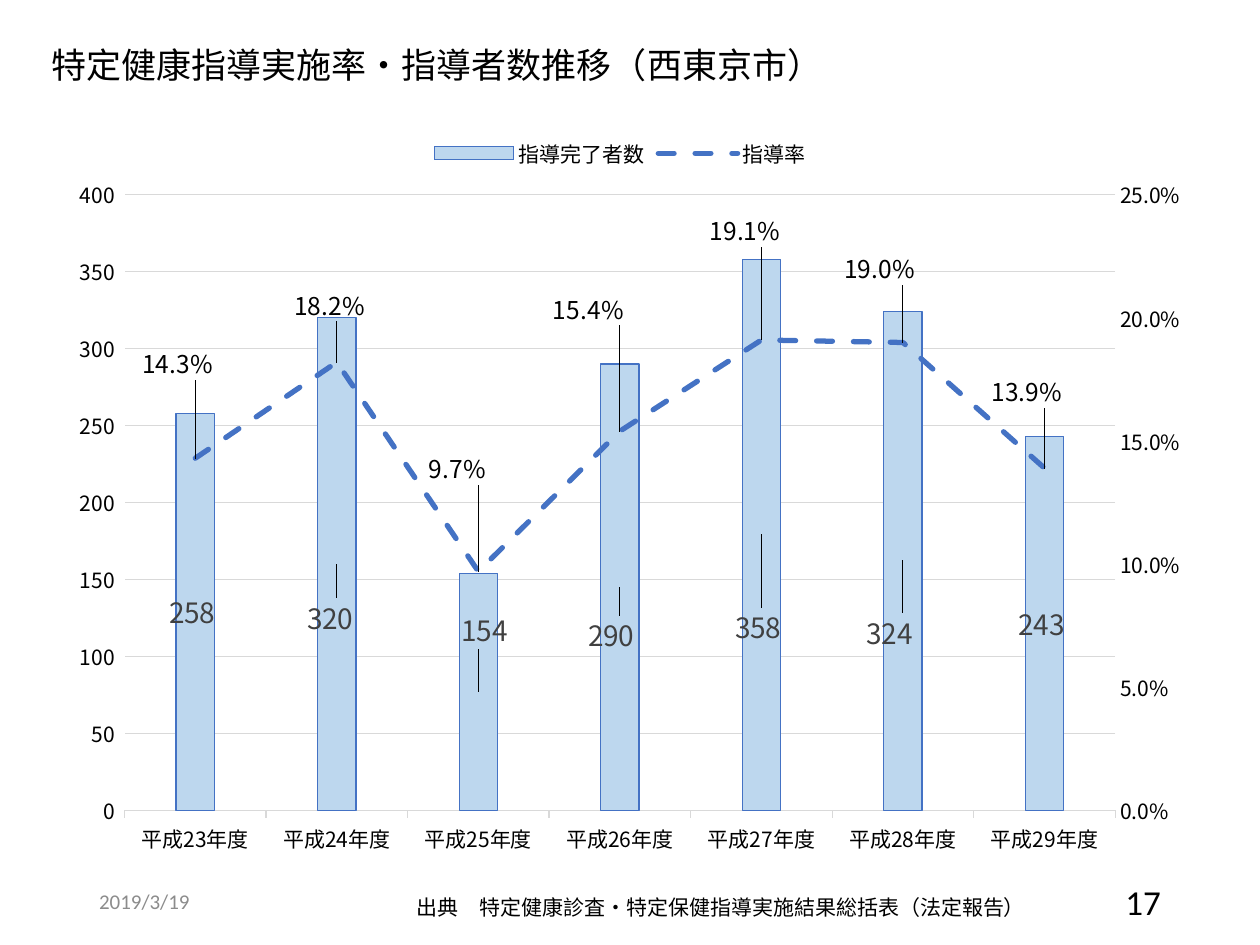
from copy import deepcopy
from dataclasses import dataclass

from pptx import Presentation
from pptx.chart.axis import ValueAxis
from pptx.chart.data import CategoryChartData as ChartData
from pptx.dml.color import RGBColor as RGB
from pptx.enum.chart import XL_CHART_TYPE as Kind
from pptx.enum.chart import XL_LABEL_POSITION as Spot
from pptx.enum.chart import XL_LEGEND_POSITION as Side
from pptx.enum.chart import XL_MARKER_STYLE as Marker
from pptx.enum.chart import XL_TICK_MARK as Tick
from pptx.enum.dml import MSO_LINE as Dash
from pptx.enum.text import MSO_ANCHOR as Anchor
from pptx.enum.text import MSO_AUTO_SIZE as Fit
from pptx.enum.text import PP_ALIGN as Align
from pptx.oxml import parse_xml
from pptx.oxml.ns import nsdecls, qn
from pptx.util import Pt


@dataclass(frozen=True)
class Theme:
    ink: str = "000000"
    soft: str = "404040"
    date: str = "8C8C8C"
    grid: str = "D9D9D9"
    bar: str = "BDD7EE"
    line: str = "4472C4"
    large: int = 20
    count: int = 16
    rate: int = 14
    small: int = 12
    cjk: str = "Noto Sans CJK JP"
    latin: str = "Calibri"


T = Theme()
COUNTS = [258, 320, 154, 290, 358, 324, 243]
RATES = [0.143, 0.182, 0.097, 0.154, 0.191, 0.19, 0.139]
COUNT_FMT = r"#,##0_);[Red]\(#,##0\)"
RATE_FMT = "0.0%"
# Label shifts by point, in percent of the chart's width and height
COUNT_MOVES = {1: (-0.3, 7.2), 2: (0.8, -8.4), 3: (-0.5, 6.4),
               4: (0, 12.4), 5: (-0.9, 9.6)}
RATE_MOVES = dict(enumerate([(-1.5, -9.8), (-0.6, -4.8), (-1.8, -10.9),
                             (-2.7, -13.5), (-1.4, -11.8), (-2, -7),
                             (-1.5, -7.4)]))
# Keeps moved labels free of leader lines
NO_LEADS = (
    f'<c:extLst {nsdecls("c")}>'
    '<c:ext uri="{CE6537A1-D6FC-4f65-9D91-7224C49458BB}" xmlns:c15='
    '"http://schemas.microsoft.com/office/drawing/2012/chart">'
    '<c15:showLeaderLines val="0"/></c:ext></c:extLst>')


def style(font, size, color=T.ink, face=T.cjk):
    font.size = Pt(size)
    font.bold = False
    font.name = face
    font.color.rgb = RGB.from_string(color)


def stroke(line, color, width=0.75):
    line.color.rgb = RGB.from_string(color)
    line.width = Pt(width)


def set_asian(root):
    """Give East Asian letters the same face as Latin ones."""
    for latin in list(root.iter(qn("a:latin"))):
        face = latin.get("typeface")
        latin.addnext(parse_xml(f'<a:ea {nsdecls("a")} typeface="{face}"/>'))


def write(shape, box, text, size, color=T.ink, face=T.cjk,
          align=Align.LEFT, anchor=Anchor.TOP, fit=Fit.NONE):
    shape.left, shape.top, shape.width, shape.height = map(Pt, box)
    frame = shape.text_frame
    frame.word_wrap = True
    frame.auto_size = fit
    frame.vertical_anchor = anchor
    para = frame.paragraphs[0]
    para.alignment = align
    run = para.add_run()
    run.text = text
    style(run.font, size, color, face)


def add_text(slide, box, *args, **opts):
    write(slide.shapes.add_textbox(*map(Pt, box)), box, *args, **opts)


def layout_xml(**vals):
    tags = "".join(f'<c:{k} val="{v}"/>' for k, v in vals.items())
    return parse_xml(f'<c:layout {nsdecls("c")}><c:manualLayout>{tags}'
                     '</c:manualLayout></c:layout>')


def split_rates(chart):
    """Move the second series to a line plot with its own axes."""
    area = chart._chartSpace.chart.plotArea
    ser = area.xpath("c:barChart/c:ser")[1]
    for flag in ser.xpath("c:invertIfNegative"):
        ser.remove(flag)
    plot = parse_xml(
        f'<c:lineChart {nsdecls("c")}><c:grouping val="standard"/>'
        '<c:varyColors val="0"/><c:marker val="1"/>'
        '<c:axId val="501"/><c:axId val="502"/></c:lineChart>')
    plot.insert(2, ser)
    area.xpath("c:barChart")[0].addnext(plot)

    cat, val = (deepcopy(area.xpath(tag)[0]) for tag in ("c:catAx", "c:valAx"))
    area.xpath("c:valAx")[0].addnext(val)
    val.addnext(cat)
    for axis, own, other in ((cat, 501, 502), (val, 502, 501)):
        axis.xpath("c:axId")[0].set("val", str(own))
        axis.xpath("c:crossAx")[0].set("val", str(other))
    cat.xpath("c:delete")[0].set("val", "1")
    val.xpath("c:axPos")[0].set("val", "r")
    val.xpath("c:crosses")[0].set("val", "max")
    return ValueAxis(val)


def scale(axis, top, step, fmt):
    axis.minimum_scale, axis.maximum_scale, axis.major_unit = 0, top, step
    axis.major_tick_mark = axis.minor_tick_mark = Tick.NONE
    axis.tick_labels.number_format = fmt
    axis.tick_labels.number_format_is_linked = False
    axis.format.line.fill.background()
    style(axis.tick_labels.font, T.small)


def label(ser, spot, size, color, fmt, moves):
    labels = ser.data_labels
    labels.show_value = True
    labels.position = spot
    labels.number_format = fmt
    labels.number_format_is_linked = False
    style(labels.font, size, color)
    for i in moves:
        tag = ser.points[i].data_label
        style(tag.font, size, color)
        tag.position = spot
    for node in ser._element.xpath("c:dLbls/c:dLbl"):
        idx = node.xpath("c:idx")[0]
        x, y = moves[int(idx.get("val"))]
        idx.addnext(layout_xml(x=round(x / 100, 3), y=round(y / 100, 3)))
    ser._element.xpath("c:dLbls")[0].append(parse_xml(NO_LEADS))


def add_trend(slide, box):
    data = ChartData()
    data.categories = [f"平成{year}年度" for year in range(23, 30)]
    data.add_series("指導完了者数", COUNTS, COUNT_FMT)
    data.add_series("指導率", RATES, RATE_FMT)
    chart = slide.shapes.add_chart(
        Kind.COLUMN_CLUSTERED, *map(Pt, box), data).chart
    chart.has_title = False
    style(chart.font, 10, face=T.latin)

    # Legend and plot area
    chart.has_legend = True
    chart.legend.position = Side.TOP
    chart.legend.include_in_layout = False
    style(chart.legend.font, T.small)
    area = chart._chartSpace.chart.plotArea
    for old in area.xpath("c:layout"):
        area.remove(old)
    area.insert(0, layout_xml(layoutTarget="inner", xMode="edge", yMode="edge",
                              x=0.074, y=0.096, w=0.852, h=0.828))

    # Axes: the right one starts as a twin of the left one
    base, left = chart.category_axis, chart.value_axis
    base.major_tick_mark = Tick.OUTSIDE
    stroke(base.format.line, T.grid)
    style(base.tick_labels.font, T.small)
    left.has_major_gridlines = True
    stroke(left.major_gridlines.format.line, T.grid)
    scale(left, 400, 50, COUNT_FMT)
    right = split_rates(chart)
    right.has_major_gridlines = False
    scale(right, 0.25, 0.05, RATE_FMT)

    # Columns and dashed line
    bars, lines = chart.plots
    bars.gap_width = 269
    bars.vary_by_categories = lines.vary_by_categories = False
    count, rate = bars.series[0], lines.series[0]
    count.format.fill.solid()
    count.format.fill.fore_color.rgb = RGB.from_string(T.bar)
    stroke(count.format.line, T.line)
    rate.smooth = False
    rate.marker.style = Marker.NONE
    stroke(rate.format.line, T.line, 3)
    rate.format.line.dash_style = Dash.DASH
    rate._element.xpath("c:spPr/a:ln")[0].set("cap", "rnd")
    label(count, Spot.CENTER, T.count, T.soft, COUNT_FMT, COUNT_MOVES)
    label(rate, Spot.ABOVE, T.rate, T.ink, RATE_FMT, RATE_MOVES)
    set_asian(chart._chartSpace)


def add_foot(slide, box):
    x, y, w, h = box
    side = 162
    add_text(slide, (x + 181.5, y + 7, 389.5, 22),
             "出典　特定健康診査・特定保健指導実施結果総括表（法定報告）",
             T.small, fit=Fit.SHAPE_TO_FIT_TEXT)
    add_text(slide, (x + w - side, y, side, h), "17", T.large, face=T.latin,
             align=Align.RIGHT, anchor=Anchor.MIDDLE)
    add_text(slide, (x, y, side, h), "2019/3/19", T.small, T.date, T.latin,
             anchor=Anchor.MIDDLE)


def main():
    deck = Presentation()
    deck.slide_width, deck.slide_height = Pt(720), Pt(540)
    slide = deck.slides.add_slide(deck.slide_layouts[5])
    write(slide.shapes.title, (22, 21.5, 545, 31.5),
          "特定健康指導実施率・指導者数推移（西東京市）", T.large,
          fit=Fit.SHAPE_TO_FIT_TEXT)
    add_trend(slide, (22, 70.5, 664.5, 425))
    add_foot(slide, (49.5, 500.5, 621, 29))
    set_asian(slide.shapes._spTree)
    deck.save("out.pptx")


if __name__ == "__main__":
    main()
